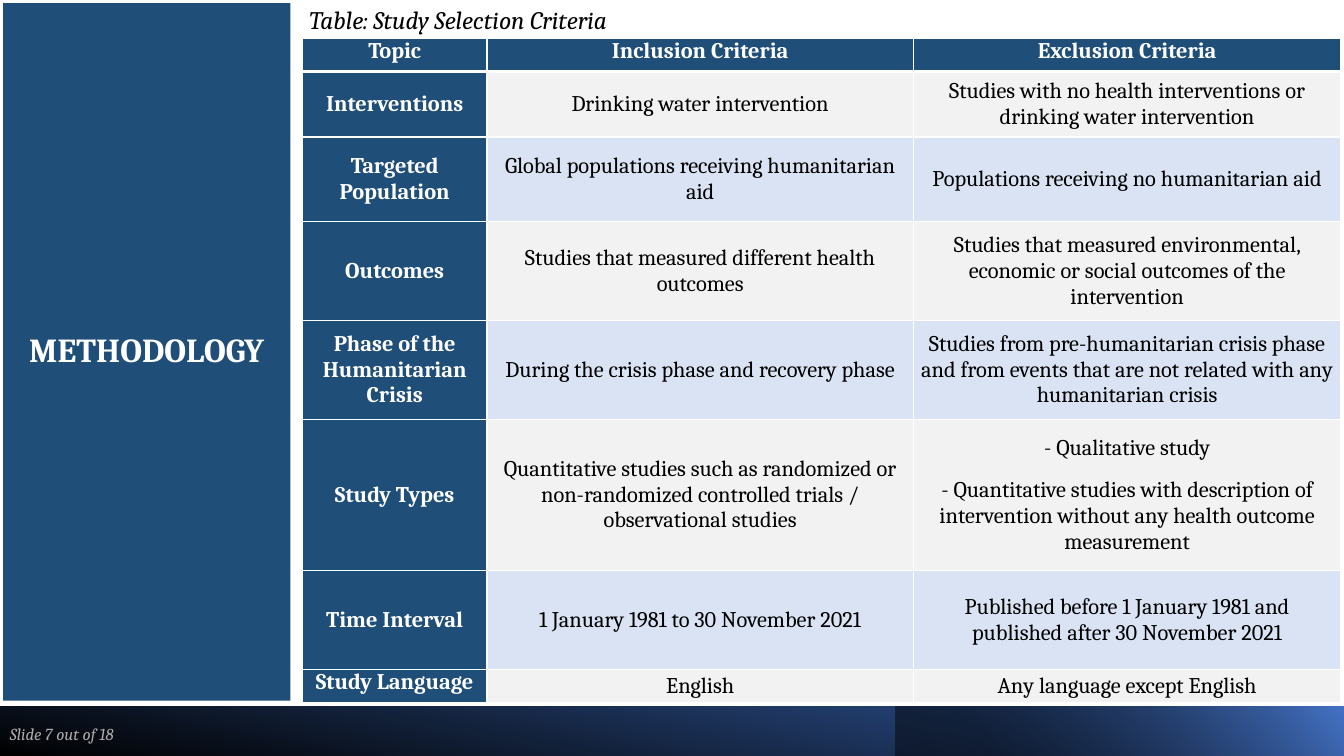
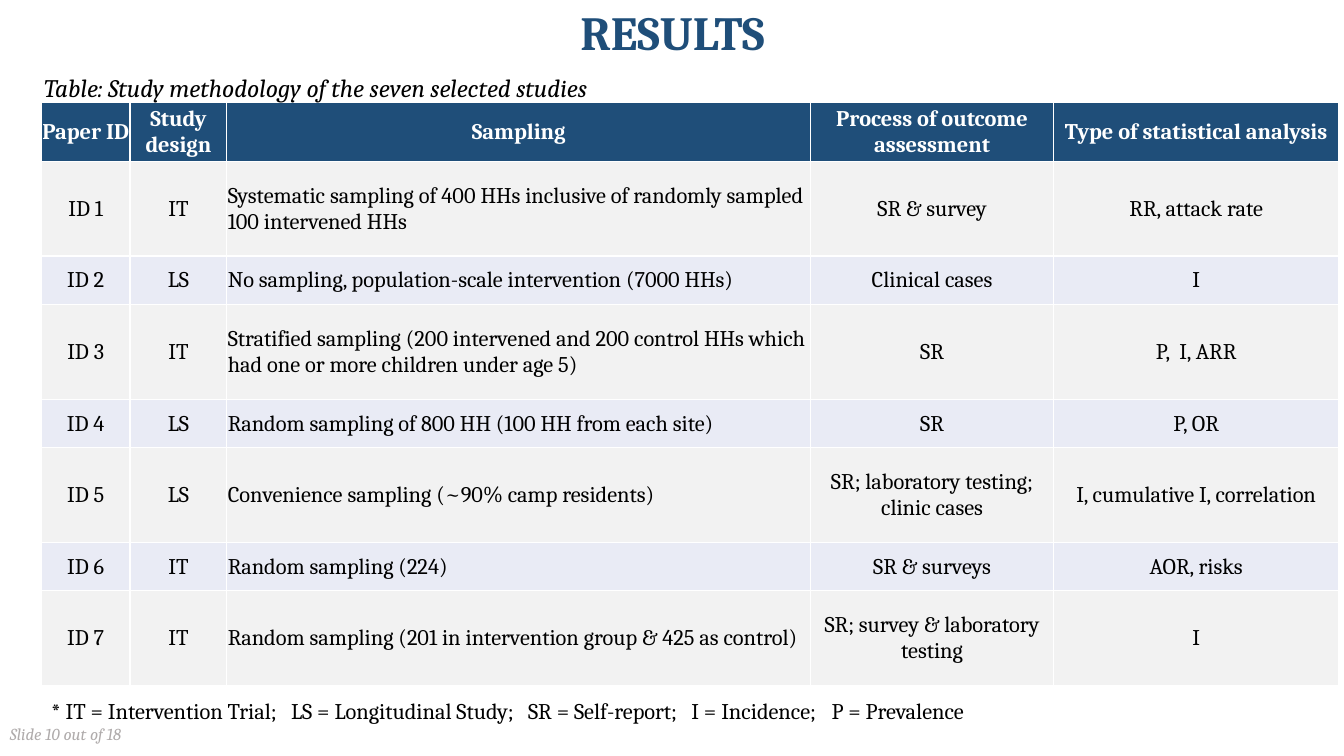
import pptx
import pptx.dml.color
import pptx.enum.shapes
import pptx.enum.text
import pptx.oxml.ns
import pptx.util
import lxml.etree

Inches = pptx.util.Inches
Pt = pptx.util.Pt
qn = pptx.oxml.ns.qn
rgb = pptx.dml.color.RGBColor.from_string
MIDDLE = pptx.enum.text.MSO_ANCHOR.MIDDLE
TOP = pptx.enum.text.MSO_ANCHOR.TOP
LEFT = pptx.enum.text.PP_ALIGN.LEFT
CENTER = pptx.enum.text.PP_ALIGN.CENTER
RECTANGLE = pptx.enum.shapes.MSO_SHAPE.RECTANGLE

FONT = "Cambria"
NAVY = "1F4E79"
WHITE = "FFFFFF"
BLACK = "000000"
LIGHT_GREY = "F2F2F2"
FOOTER_GREY = "AFABAB"


def write(text_frame, text, size, color, bold=False, italic=False,
          align=LEFT, line_spacing=None, before=0, after=0):
    text_frame.word_wrap = True
    text_frame.text = text
    for paragraph in text_frame.paragraphs:
        paragraph.alignment = align
        paragraph.line_spacing = line_spacing
        paragraph.space_before = Pt(before)
        paragraph.space_after = Pt(after)
        for run in paragraph.runs:
            run.font.name = FONT
            run.font.size = Pt(size)
            run.font.bold = bold
            run.font.italic = italic
            run.font.color.rgb = rgb(color)


def add_text(slide, left, top, width, height, text, size, color, anchor=TOP, **style):
    text_box = slide.shapes.add_textbox(Inches(left), Inches(top), Inches(width), Inches(height))
    text_box.text_frame.vertical_anchor = anchor
    write(text_box.text_frame, text, size, color, **style)
    return text_box


presentation = pptx.Presentation()
presentation.slide_width = Inches(13.33)
presentation.slide_height = Inches(7.5)
blank_layout = presentation.slide_layouts[6]
methodology = presentation.slides.add_slide(blank_layout)
results = presentation.slides.add_slide(blank_layout)

title_panel = methodology.shapes.add_shape(
    RECTANGLE, Inches(0.03), Inches(0.03), Inches(2.85), Inches(6.92))
title_panel.shadow.inherit = False
title_panel.fill.solid()
title_panel.fill.fore_color.rgb = rgb(NAVY)
title_panel.line.fill.background()
title_panel.text_frame.vertical_anchor = MIDDLE
write(title_panel.text_frame, "METHODOLOGY", 24, WHITE, bold=True, align=CENTER, line_spacing=0.9)

bands = [
    (0, 13.33, 80, [(0, BLACK, 100), (1, "2F5597", 100)]),
    (8.88, 4.46, 40, [(0.19, BLACK, 46), (0.99, "4472C4", 100)]),
]
for left, width, angle, stops in bands:
    band = methodology.shapes.add_shape(
        RECTANGLE, Inches(left), Inches(7.01), Inches(width), Inches(0.51))
    band.shadow.inherit = False
    band.line.fill.background()
    band.fill.gradient()
    band.fill.gradient_angle = angle
    for stop, (position, color, opacity) in zip(band.fill.gradient_stops, stops):
        stop.position = position
        stop.color.rgb = rgb(color)
    for color_element, (position, color, opacity) in zip(band.element.iter(qn("a:srgbClr")), stops):
        if opacity < 100:
            lxml.etree.SubElement(color_element, qn("a:alpha"), val=str(opacity * 1000))

criteria = [
    ("Topic", "Inclusion Criteria", "Exclusion Criteria"),
    ("Interventions", "Drinking water intervention",
     "Studies with no health interventions or drinking water intervention"),
    ("Targeted Population", "Global populations receiving humanitarian aid",
     "Populations receiving no humanitarian aid"),
    ("Outcomes", "Studies that measured different health outcomes",
     "Studies that measured environmental, economic or social outcomes of the intervention"),
    ("Phase of the Humanitarian Crisis", "During the crisis phase and recovery phase",
     "Studies from pre-humanitarian crisis phase and from events that are not related "
     "with any humanitarian crisis"),
    ("Study Types",
     "Quantitative studies such as randomized or non-randomized controlled trials / "
     "observational studies",
     "- Qualitative study\n- Quantitative studies with description of intervention "
     "without any health outcome measurement"),
    ("Time Interval", "1 January 1981 to 30 November 2021",
     "Published before 1 January 1981 and published after 30 November 2021"),
    ("Study Language", "English", "Any language except English"),
]
studies = [
    ("Paper ID", "Study design", "Sampling", "Process of outcome assessment",
     "Type of statistical analysis"),
    ("ID 1", "IT",
     "Systematic sampling of 400 HHs inclusive of randomly sampled 100 intervened HHs",
     "SR & survey", "RR, attack rate"),
    ("ID 2", "LS", "No sampling, population-scale intervention (7000 HHs)",
     "Clinical cases", "I"),
    ("ID 3", "IT",
     "Stratified sampling (200 intervened and 200 control HHs which had one or more "
     "children under age 5)",
     "SR", "P,  I, ARR"),
    ("ID 4", "LS", "Random sampling of 800 HH (100 HH from each site)", "SR", "P, OR"),
    ("ID 5", "LS", "Convenience sampling (~90% camp residents)",
     "SR; laboratory testing; clinic cases", "I, cumulative I, correlation"),
    ("ID 6", "IT", "Random sampling (224)", "SR & surveys", "AOR, risks"),
    ("ID 7", "IT", "Random sampling (201 in intervention group & 425 as control)",
     "SR; survey & laboratory testing", "I"),
]
tables = [
    dict(slide=methodology, left=3, top=0.38, rows=criteria, widths=[1.83, 4.23, 4.24],
         heights=[0.33, 0.65, 0.84, 0.98, 0.98, 1.5, 0.98, 0.33], side=0.06, inset_top=0,
         after=12, stripe="DAE3F3", header_column=0, left_column=None, header_rule=3,
         top_cells=[(0, 0), (0, 1), (0, 2), (7, 0)]),
    dict(slide=results, left=0.41, top=1.02, rows=studies, widths=[0.88, 0.96, 5.79, 2.41, 2.83],
         heights=[0.58] + [0.94, 0.48] * 3 + [0.94], side=0.01, inset_top=0.01,
         after=0, stripe="E9EBF5", header_column=None, left_column=2, header_rule=1,
         top_cells=[]),
]
for design in tables:
    widths, heights = design["widths"], design["heights"]
    table = design["slide"].shapes.add_table(
        len(heights), len(widths), Inches(design["left"]), Inches(design["top"]),
        Inches(sum(widths)), Inches(sum(heights))).table
    for column, width in zip(table.columns, widths):
        column.width = Inches(width)
    for row, height in zip(table.rows, heights):
        row.height = Inches(height)
    for row_index, texts in enumerate(design["rows"]):
        for column_index, text in enumerate(texts):
            cell = table.cell(row_index, column_index)
            is_header = row_index == 0 or column_index == design["header_column"]
            is_left = row_index > 0 and column_index == design["left_column"]
            cell.margin_left = cell.margin_right = Inches(design["side"])
            cell.margin_top = Inches(design["inset_top"])
            cell.margin_bottom = 0
            cell.vertical_anchor = TOP if (row_index, column_index) in design["top_cells"] else MIDDLE
            write(cell.text_frame, text, 16, WHITE if is_header else BLACK, bold=is_header,
                  align=LEFT if is_left else CENTER, after=design["after"])
            for side in ("L", "R", "T", "B"):
                under_header = (row_index, side) in [(0, "B"), (1, "T")]
                weight = design["header_rule"] if under_header else 1
                border = lxml.etree.SubElement(
                    cell._tc.get_or_add_tcPr(), qn("a:ln" + side), w=str(Pt(weight)))
                border_fill = lxml.etree.SubElement(border, qn("a:solidFill"))
                lxml.etree.SubElement(border_fill, qn("a:srgbClr"), val=WHITE)
            cell.fill.solid()
            body_color = LIGHT_GREY if row_index % 2 else design["stripe"]
            cell.fill.fore_color.rgb = rgb(NAVY if is_header else body_color)

labels = [
    (methodology, 2.97, 0.03, 4.02, "Table: Study Selection Criteria", 7),
    (results, 0.34, 0.7, 7.04, "Table: Study methodology of the seven selected studies", 10),
]
for slide, left, top, width, caption, number in labels:
    add_text(slide, left, top, width, 0.66, caption, 18, BLACK,
             italic=True, line_spacing=0.9, before=10)
    add_text(slide, 0, 7.08, 3, 0.4, f"Slide {number} out of 18", 12, FOOTER_GREY,
             anchor=MIDDLE, italic=True)

add_text(results, 0.92, 0, 11.5, 0.7, "RESULTS", 34, NAVY,
         anchor=MIDDLE, bold=True, align=CENTER, line_spacing=0.9)

legend = ["* IT = Intervention Trial;", "LS = Longitudinal Study;", "SR = Self-report;",
          "I = Incidence;", "P = Prevalence"]
legend_box = add_text(results, 0.41, 6.9, 12.86, 0.66, "\t".join(legend), 16, BLACK,
                      line_spacing=0.9, before=10)
paragraph_properties = legend_box.text_frame.paragraphs[0]._p.get_or_add_pPr()
tab_list = lxml.etree.SubElement(paragraph_properties, qn("a:tabLst"))
for position in (2.38, 4.73, 6.35, 7.74):
    lxml.etree.SubElement(tab_list, qn("a:tab"), pos=str(Inches(position)), algn="l")

presentation.save("out.pptx")
